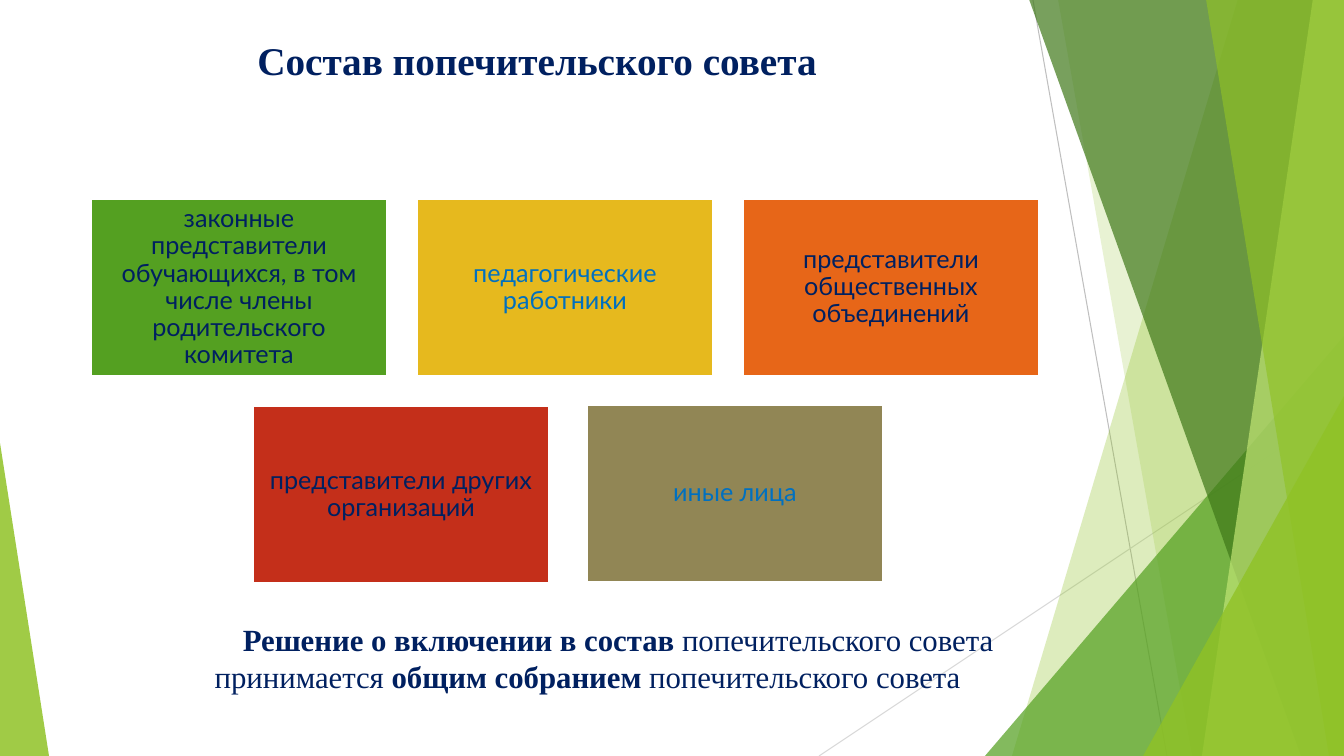
from lxml import etree
from pptx import Presentation
from pptx import util as u
from pptx.dml.color import RGBColor
from pptx.enum import shapes, text
from pptx.oxml.ns import qn

PX = 914400 / 100.8  # EMU in one px
WIDTH, HEIGHT = 1344, 756
COLORS = {
    "navy": "002060", "blue": "0070C0", "white": "FFFFFF",
    "lime": "90C226", "green": "54A021", "forest": "3F7819", "pale": "C0E474",
    "yellow": "E6B91E", "orange": "E76618", "red": "C42F1A", "olive": "918655",
    "gray": "BFBFBF", "light gray": "D9D9D9",
}


def emu(*lengths):
    return [u.Emu(round(length * PX)) for length in lengths]


def write(shape, spans, size, font, color="navy", anchor=text.MSO_ANCHOR.TOP,
          inset=None, line_spacing=None, indent=0):
    """Fill a shape with one centred paragraph of (wording, bold) spans."""
    frame = shape.text_frame
    frame.word_wrap = True
    frame.vertical_anchor = anchor
    if inset is not None:
        frame.margin_left = frame.margin_top = emu(inset)[0]
        frame.margin_right = frame.margin_bottom = emu(inset)[0]
    para = frame.paragraphs[0]
    para.alignment = text.PP_ALIGN.CENTER
    if line_spacing:
        para.line_spacing = line_spacing
    if indent:
        para._p.get_or_add_pPr().set("indent", str(emu(indent)[0]))
    for wording, bold in spans:
        span = para.add_run()
        span.text = wording
        span.font.name = font
        span.font.size = u.Pt(size)
        span.font.bold = bold
        span.font.color.rgb = RGBColor.from_string(COLORS[color])


deck = Presentation()
deck.slide_width, deck.slide_height = emu(WIDTH, HEIGHT)
page = deck.slides.add_slide(deck.slide_layouts[6])

# Thin background lines
for ends, color in [((1033, 0, 1167, HEIGHT), "gray"),
                    ((WIDTH, 406, 819, HEIGHT), "light gray")]:
    line = page.shapes.add_connector(shapes.MSO_CONNECTOR.STRAIGHT, *emu(*ends))
    line.line.color.rgb = RGBColor.from_string(COLORS[color])
    line.line.width = u.Pt(0.75)
    etree.SubElement(line._element.spPr, qn("a:effectLst"))

# Translucent facets: a band is (top x, bottom x) and runs to the right edge,
# a triangle is (left, top, width, apex) and stands on the bottom edge
facets = [
    ((1238, 1012), "lime", 30),
    ((1058, 1192), "lime", 20),
    ((985, 336, 359, 1), "green", 72),
    ((1029, 1301), "forest", 70),
    ((1313, 1202), "pale", 70),
    ((1206, 1329), "lime", 65),
    ((1143, 396, 201, 1), "lime", 80),
    ((0, 443, 49, 0), "lime", 85),
]
for outline, color, opacity in facets:
    if len(outline) == 2:
        top_x, bottom_x = outline
        builder = page.shapes.build_freeform(top_x, -1, scale=PX)
        builder.add_line_segments([(WIDTH, -1), (WIDTH, HEIGHT), (bottom_x, HEIGHT)])
        facet = builder.convert_to_shape()
    else:
        left, top, width, apex = outline
        facet = page.shapes.add_shape(shapes.MSO_SHAPE.ISOSCELES_TRIANGLE,
                                      *emu(left, top, width, HEIGHT - top))
        facet.adjustments[0] = apex
    facet.shadow.inherit = False
    facet.line.fill.background()
    facet.fill.solid()
    facet.fill.fore_color.rgb = RGBColor.from_string(COLORS[color])
    tint = facet._element.spPr.find(qn("a:solidFill"))[0]
    etree.SubElement(tint, qn("a:alpha"), val=str(opacity * 1000))

# Title
title = page.shapes.add_textbox(*emu(63, 31, 948, 145))
write(title, [("Состав попечительского совета", True)], 28, "Times New Roman")

# Council members
CARD_LEFT, CARD_STEP, CARD_TOP = 91, 326, 199
members = [
    (CARD_LEFT, CARD_TOP, "green", "navy",
     "законные представители обучающихся, в том числе члены родительского комитета"),
    (CARD_LEFT + CARD_STEP, CARD_TOP, "yellow", "blue", "педагогические работники"),
    (CARD_LEFT + 2 * CARD_STEP, CARD_TOP, "orange", "navy",
     "представители общественных объединений"),
    (253, 406, "red", "navy", "представители других организаций"),
    (587, 405, "olive", "blue", "иные лица"),
]
for left, top, fill, color, wording in members:
    card = page.shapes.add_shape(shapes.MSO_SHAPE.RECTANGLE, *emu(left, top, 296, 177))
    card.shadow.inherit = False
    card.fill.solid()
    card.fill.fore_color.rgb = RGBColor.from_string(COLORS[fill])
    card.line.color.rgb = RGBColor.from_string(COLORS["white"])
    card.line.width = u.Pt(1.5)
    write(card, [(wording, False)], 18, "Lato", color,
          anchor=text.MSO_ANCHOR.MIDDLE, inset=7, line_spacing=0.9)

# Decision note
note = page.shapes.add_textbox(*emu(89, 616, 997, 85))
write(note, [("Решение о включении в состав ", True),
             ("попечительского совета принимается ", False),
             ("общим собранием ", True),
             ("попечительского совета", False)],
      22, "Times New Roman", indent=61)

deck.save("out.pptx")
